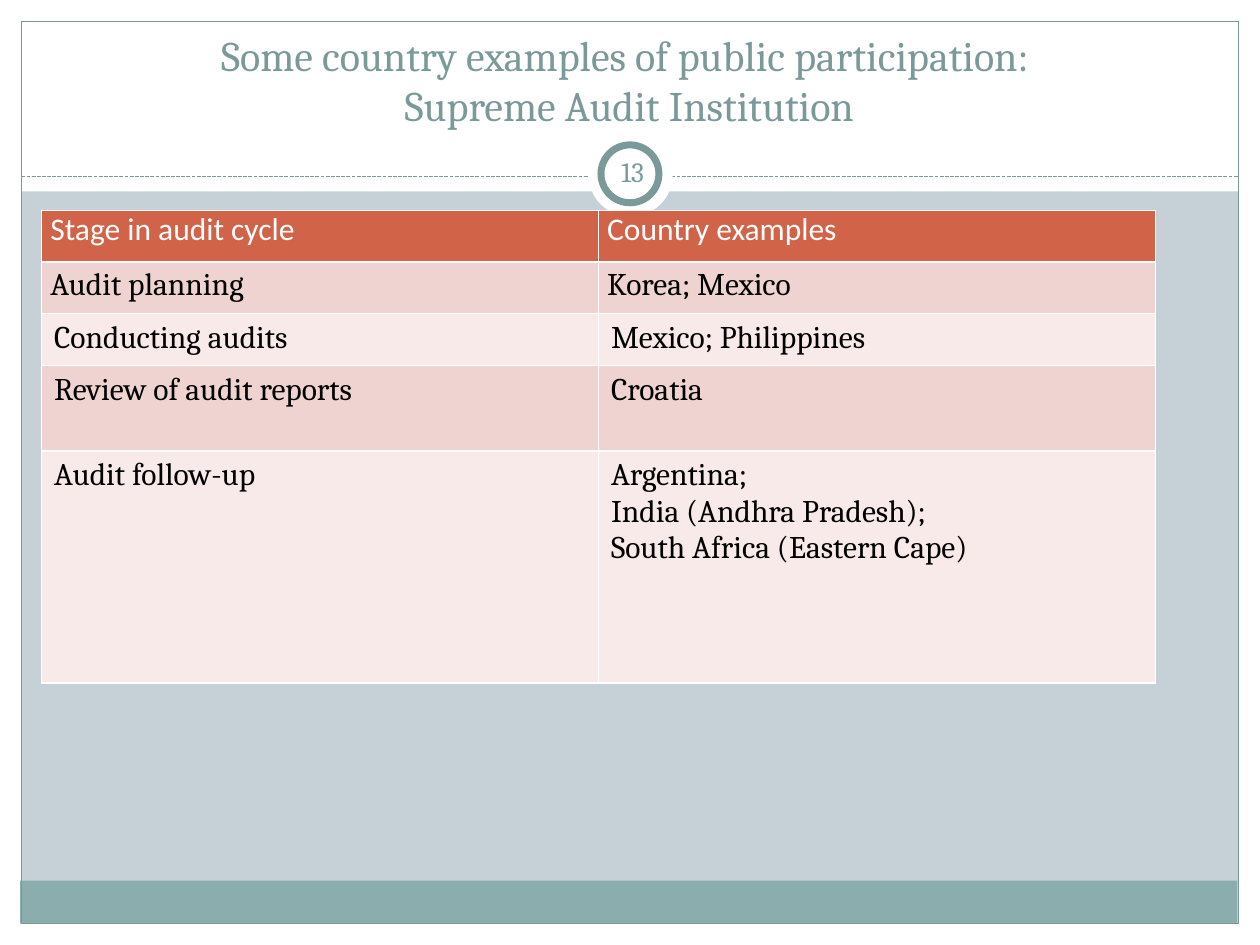
from lxml.etree import SubElement
from pptx import Presentation
from pptx.dml.color import RGBColor
from pptx.enum.dml import MSO_LINE
from pptx.enum.shapes import MSO_CONNECTOR, MSO_SHAPE
from pptx.enum.text import MSO_ANCHOR, PP_ALIGN
from pptx.oxml.ns import qn
from pptx.util import Inches, Pt

WHITE, TEAL = "FFFFFF", "7C999A"
HEADER, BAND_DARK, BAND_LIGHT = "D16349", "EED3D0", "F7EAE9"
ROWS = [
    ("Stage in audit cycle", "Country examples"),
    ("Audit planning", "Korea; Mexico"),
    ("Conducting audits", "Mexico; Philippines"),
    ("Review of audit reports", "Croatia"),
    ("Audit follow-up",
     "Argentina;\nIndia (Andhra Pradesh);\nSouth Africa (Eastern Cape)"),
]
ROW_HEIGHTS = [0.41, 0.41, 0.41, 0.68, 1.84]


def color(value):
    return RGBColor.from_string(value)


def add_run(p, text, size, font, hex_color):
    r = p.add_run()
    r.text = text
    r.font.size = Pt(size)
    r.font.name = font
    r.font.color.rgb = color(hex_color)


def add_box(s, kind, box, fill=None, line=None, width=0.75):
    sp = s.shapes.add_shape(kind, *map(Inches, box))
    sp.shadow.inherit = False
    if fill:
        sp.fill.solid()
        sp.fill.fore_color.rgb = color(fill)
    else:
        sp.fill.background()
    if line:
        sp.line.color.rgb = color(line)
        sp.line.width = Pt(width)
    else:
        sp.line.fill.background()


def add_dashed_line(s, x1, x2, y):
    line = s.shapes.add_connector(
        MSO_CONNECTOR.STRAIGHT, Inches(x1), Inches(y), Inches(x2), Inches(y))
    line.line.color.rgb = color(TEAL)
    line.line.width = Pt(0.75)
    line.line.dash_style = MSO_LINE.SQUARE_DOT
    SubElement(line._element.spPr, qn("a:effectLst"))


def add_text(s, box, lines, size, anchor, inset_x=0.1):
    """Add centred text whose lines are parted by line breaks."""
    tf = s.shapes.add_textbox(*map(Inches, box)).text_frame
    tf.word_wrap = True
    tf.vertical_anchor = anchor
    tf.margin_left = tf.margin_right = Inches(inset_x)
    p = tf.paragraphs[0]
    p.alignment = PP_ALIGN.CENTER
    for i, text in enumerate(lines):
        if i:
            p.add_line_break()
        add_run(p, text, size, "Cambria", TEAL)


def set_borders(cell):
    """Put thin white lines on all four sides, ahead of the cell's fill."""
    tcPr = cell._tc.get_or_add_tcPr()
    for i, side in enumerate(("lnL", "lnR", "lnT", "lnB")):
        ln = SubElement(tcPr, qn(f"a:{side}"), w=str(Pt(1)))
        fill = SubElement(ln, qn("a:solidFill"))
        SubElement(fill, qn("a:srgbClr"), val=WHITE)
        tcPr.insert(i, ln)


def fill_cell(cell, text, row):
    cell.fill.solid()
    band = BAND_DARK if row % 2 else BAND_LIGHT
    cell.fill.fore_color.rgb = color(band if row else HEADER)
    set_borders(cell)
    if row < 2:
        cell.margin_left = cell.margin_right = Inches(0.07)
        cell.margin_top = cell.margin_bottom = 0
    tf = cell.text_frame
    for i, line in enumerate(text.split("\n")):
        p = tf.add_paragraph() if i else tf.paragraphs[0]
        if row == 1:
            p.line_spacing = 1.15
        if row:
            add_run(p, line, 18, "Cambria", "000000")
        else:
            add_run(p, line, 18, "Calibri", WHITE)


def add_examples_table(s):
    table = s.shapes.add_table(
        len(ROWS), 2, Inches(0.33), Inches(1.67),
        Inches(8.84), Inches(sum(ROW_HEIGHTS))).table
    for row, (texts, height) in enumerate(zip(ROWS, ROW_HEIGHTS)):
        table.rows[row].height = Inches(height)
        for col, text in enumerate(texts):
            fill_cell(table.cell(row, col), text, row)


def add_frame(s):
    for box in ((0, 7.33, 10, 0.17), (0, 0, 10, 1.52),
                (0, 0, 0.17, 7.5), (9.83, 0, 0.17, 7.5)):
        add_box(s, MSO_SHAPE.RECTANGLE, box, WHITE)
    add_box(s, MSO_SHAPE.RECTANGLE, (0.16, 6.99, 9.66, 0.34), "8CADAE")
    add_box(s, MSO_SHAPE.RECTANGLE, (0.17, 0.17, 9.66, 7.16), line=TEAL)
    add_dashed_line(s, 0.17, 9.83, 1.4)
    add_box(s, MSO_SHAPE.OVAL, (4.67, 1.05, 0.67, 0.67), WHITE)
    add_box(s, MSO_SHAPE.OVAL, (4.77, 1.15, 0.46, 0.46), WHITE, TEAL, 4)


def main():
    prs = Presentation()
    prs.slide_width, prs.slide_height = Inches(10), Inches(7.5)
    s = prs.slides.add_slide(prs.slide_layouts[6])
    s.background.fill.solid()
    s.background.fill.fore_color.rgb = color("C5D1D7")
    add_frame(s)
    add_text(s, (0.33, 0.25, 9.33, 0.83),
             ["Some country examples of public participation: ",
              "Supreme Audit Institution"], 24, MSO_ANCHOR.BOTTOM)
    add_examples_table(s)
    add_text(s, (4.77, 1.12, 0.5, 0.48), ["13"], 16, MSO_ANCHOR.MIDDLE, 0.05)
    prs.save("out.pptx")


if __name__ == "__main__":
    main()
